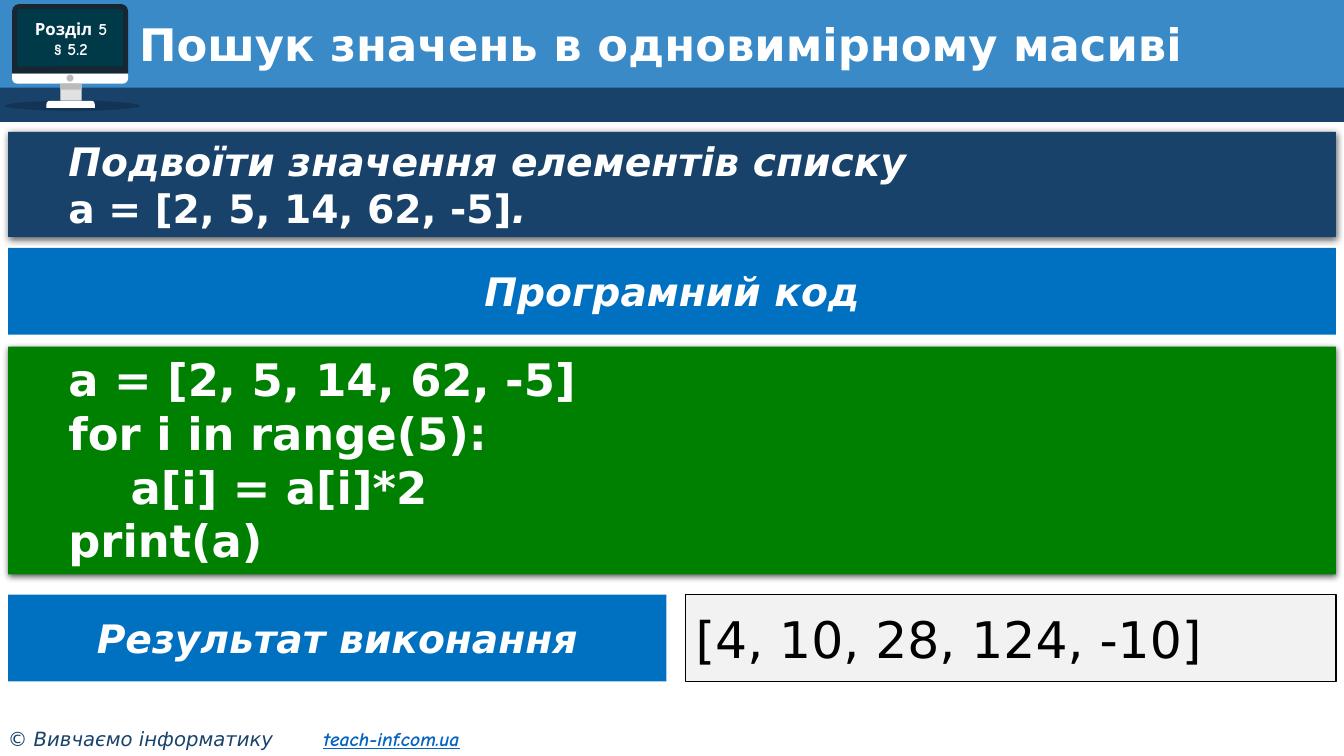
from lxml import etree
from pptx import Presentation
from pptx.dml.color import RGBColor
from pptx.enum.shapes import MSO_SHAPE
from pptx.enum.text import MSO_ANCHOR, MSO_AUTO_SIZE, PP_ALIGN
from pptx.oxml import parse_xml
from pptx.oxml.ns import qn
from pptx.util import Inches, Pt

RECT, OVAL = MSO_SHAPE.RECTANGLE, MSO_SHAPE.OVAL
ROUND, ROUND_TOP = MSO_SHAPE.ROUNDED_RECTANGLE, MSO_SHAPE.ROUND_2_SAME_RECTANGLE
TOP, MIDDLE = MSO_ANCHOR.TOP, MSO_ANCHOR.MIDDLE
LEFT, CENTER, JUSTIFY = PP_ALIGN.LEFT, PP_ALIGN.CENTER, PP_ALIGN.JUSTIFY

WHITE, BLACK = RGBColor(0xFF, 0xFF, 0xFF), RGBColor(0, 0, 0)
SKY, NAVY = RGBColor(0x39, 0x8A, 0xC7), RGBColor(0x19, 0x42, 0x6B)
BLUE, GREEN = RGBColor(0x00, 0x70, 0xC0), RGBColor(0x00, 0x80, 0x00)
PALE, LINK = RGBColor(0xF2, 0xF2, 0xF2), RGBColor(0x05, 0x63, 0xC1)
CASE, SCREEN = RGBColor(0x18, 0x26, 0x32), RGBColor(0x00, 0x39, 0x48)
STAND, GREY = RGBColor(0xE1, 0xE1, 0xE1), RGBColor(0xBB, 0xBB, 0xBB)
MAIN_FONT, ACCENT_FONT = "DejaVu Sans", "Comic Neue"

WIDTH, HEIGHT = 13.33, 7.5
MARGIN = 0.08
FULL = WIDTH - 2 * MARGIN
BAR = 0.86
RESULT_TOP = 5.9
SHADOW = (
    '<a:effectLst xmlns:a="http://schemas.openxmlformats.org/drawingml/2006/main">'
    '<a:outerShdw blurRad="57150" dist="19050" dir="5400000" algn="ctr" rotWithShape="0">'
    '<a:srgbClr val="000000"><a:alpha val="63000"/></a:srgbClr>'
    '</a:outerShdw></a:effectLst>')

prs = Presentation()
prs.slide_width, prs.slide_height = Inches(WIDTH), Inches(HEIGHT)
slide = prs.slides.add_slide(prs.slide_layouts[5])
shapes = slide.shapes


def add_block(kind, box, fill, corners=()):
    block = shapes.add_shape(kind, *(Inches(v) for v in box))
    block.shadow.inherit = False
    block.fill.solid()
    block.fill.fore_color.rgb = fill
    block.line.fill.background()
    for i, corner in enumerate(corners):
        block.adjustments[i] = corner
    return block


def write(frame, lines, align, anchor, indent=0, **base):
    """Each line is a list of (text, changed format) runs."""
    frame.word_wrap = True
    frame.auto_size = MSO_AUTO_SIZE.NONE
    frame.vertical_anchor = anchor
    for i, line in enumerate(lines):
        para = frame.paragraphs[0] if i == 0 else frame.add_paragraph()
        para.alignment = align
        if indent:
            para._p.get_or_add_pPr().set("indent", str(Inches(indent)))
        for text, changes in line:
            run = para.add_run()
            run.text = text
            look = {"name": MAIN_FONT, "bold": True, "color": WHITE, **base, **changes}
            run.font.color.rgb = look.pop("color")
            for key, value in look.items():
                setattr(run.font, key, value)


# Header bands
add_block(RECT, (0, 0, WIDTH, 0.91), SKY)
add_block(RECT, (0, 0.87, WIDTH, 0.34), NAVY)

# Monitor with the section number
floor_shade = add_block(OVAL, (0.05, 1, 1.34, 0.1), BLACK)
color_node = floor_shade._element.spPr.find(qn("a:solidFill"))[0]
etree.SubElement(color_node, qn("a:alpha")).set("val", "20000")
for kind, box, fill, corners in [
    (ROUND_TOP, (0.12, 0.04, 1.15, 0.69), CASE, (0.1, 0)),
    (ROUND_TOP, (0.12, 0.73, 1.15, 0.1), WHITE, (0, 0.5)),
    (RECT, (0.6, 0.83, 0.21, 0.17), STAND, ()),
    (RECT, (0.6, 0.83, 0.21, 0.06), GREY, ()),
    (ROUND_TOP, (0.46, 1, 0.48, 0.07), WHITE, (0.5, 0)),
    (OVAL, (0.66, 0.74, 0.07, 0.07), GREY, ()),
    (ROUND, (0.17, 0.09, 1.05, 0.57), SCREEN, (0.036,)),
]:
    add_block(kind, box, fill, corners)
section = shapes.add_textbox(Inches(0.13), Inches(0.09), Inches(1.15), Inches(0.59))
write(section.text_frame, [[("Розділ 5", {})], [("§ 5.2", {})]],
      CENTER, MIDDLE, name=ACCENT_FONT, size=Pt(12))

# Title, brought in front of the header bands
title = shapes.title
shapes._spTree.append(title._element)
title.left, title.top = Inches(1.28), Inches(0.18)
title.width, title.height = Inches(11.72), Inches(0.58)
write(title.text_frame, [[("Пошук значень в одновимірному масиві", {})]],
      LEFT, MIDDLE, size=Pt(32))
title.text_frame.paragraphs[0].line_spacing = 0.9

# Task and program code
task = [[("Подвоїти значення елементів списку", {"italic": True})],
        [("а = [2, 5, 14, 62, -5]", {}), (".", {"italic": True})]]
code = [[(line, {})] for line in (
    "a = [2, 5, 14, 62, -5]",
    "for i in range(5):",
    "    a[i] = a[i]*2",
    "print(a)")]
for top, height, fill, lines, size in [(1.31, 1.04, NAVY, task, 28),
                                       (3.44, 2.26, GREEN, code, 32)]:
    panel = add_block(RECT, (MARGIN, top, FULL, height), fill)
    spPr = panel._element.spPr
    spPr.replace(spPr.find(qn("a:effectLst")), parse_xml(SHADOW))
    write(panel.text_frame, lines, JUSTIFY, TOP, indent=0.5, size=Pt(size))

# Captions
for top, width, caption in [(2.46, FULL, "Програмний код"),
                            (RESULT_TOP, 6.53, "Результат виконання")]:
    bar = add_block(RECT, (MARGIN, top, width, BAR), BLUE)
    write(bar.text_frame, [[(caption, {})]], CENTER, MIDDLE, size=Pt(28), italic=True)

# Program output
output = add_block(RECT, (6.8, RESULT_TOP, 6.45, BAR), PALE)
output.line.color.rgb = BLACK
output.line.width = Pt(1)
write(output.text_frame, [[("[4, 10, 28, 124, -10]", {})]],
      LEFT, MIDDLE, size=Pt(36), color=BLACK, bold=False)

# Footer, with a tab stop before the address
footer = shapes.add_textbox(Inches(-0.02), Inches(7.16), Inches(5.23), Inches(0.34))
pPr = footer.text_frame.paragraphs[0]._p.get_or_add_pPr()
tabs = etree.SubElement(pPr, qn("a:tabLst"))
etree.SubElement(tabs, qn("a:tab")).attrib.update({"pos": str(Inches(3.13)), "algn": "l"})
address = {"name": ACCENT_FONT, "color": LINK, "bold": True, "underline": True}
write(footer.text_frame,
      [[("© Вивчаємо інформатику\t", {}), ("teach-inf.com.ua", address)]],
      LEFT, TOP, size=Pt(14), color=NAVY, bold=False, italic=True)

prs.save("out.pptx")
